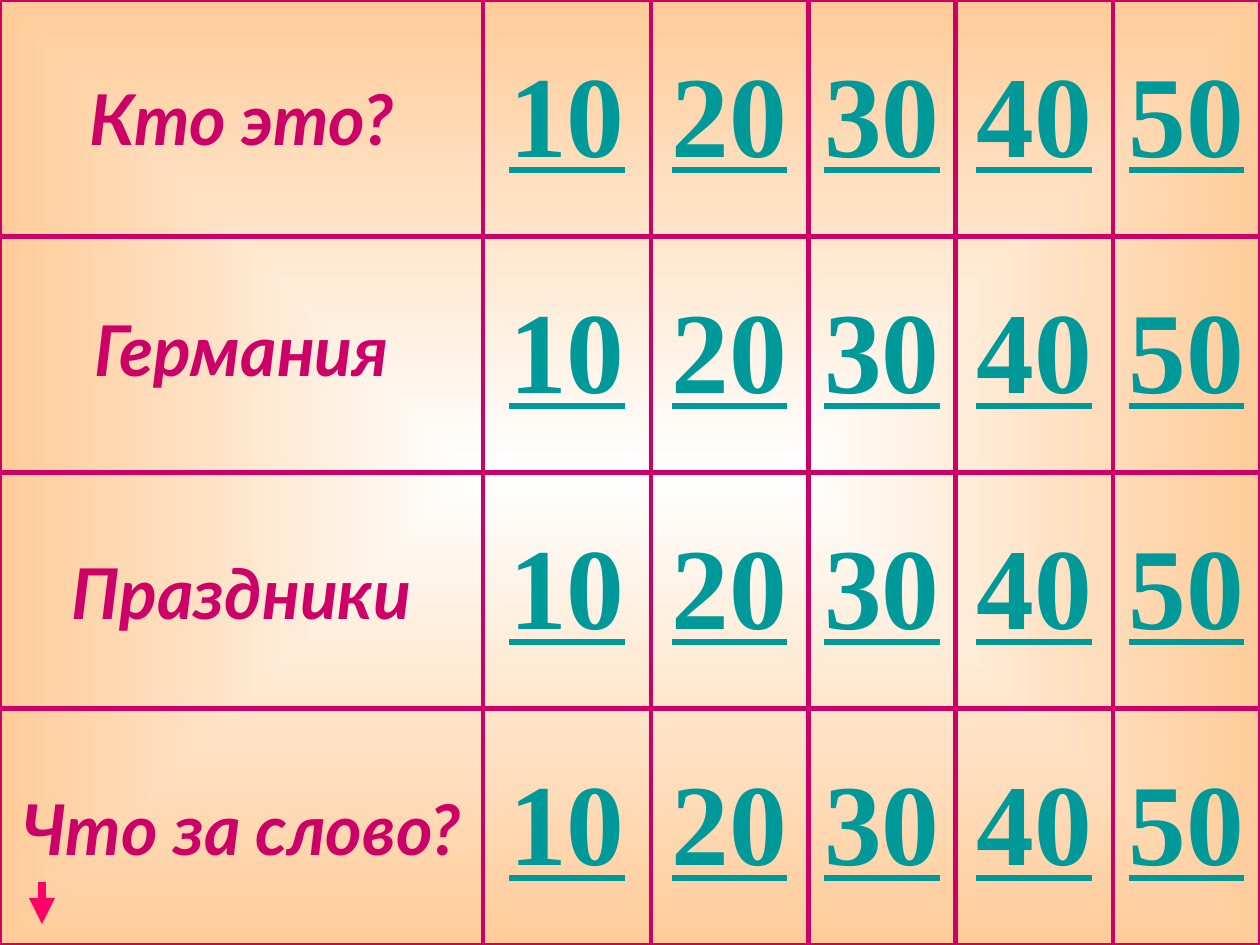
from lxml import etree
from pptx import Presentation
from pptx.dml.color import RGBColor
from pptx.enum.shapes import MSO_CONNECTOR
from pptx.enum.text import MSO_ANCHOR, PP_ALIGN
from pptx.oxml.ns import qn
from pptx.util import Pt

STRAIGHT = MSO_CONNECTOR.STRAIGHT
TOP, MIDDLE = MSO_ANCHOR.TOP, MSO_ANCHOR.MIDDLE
CENTER = PP_ALIGN.CENTER

WIDTH, HEIGHT = 720, 540
COLORS = {"white": "FFFFFF", "peach": "FFCC99", "rose": "CC0066",
          "teal": "009999", "pink": "FF0066"}
COLS = [276, 96, 90, 84, 90, 84]
# Topic and its top margin; None centres the topic in its row
TOPICS = [("Кто это?", None), ("Германия", 40.5),
          ("Праздники", 44.5), ("Что за слово?", 44.5)]
SCORES = ["10", "20", "30", "40", "50"]


def color(name):
    return RGBColor.from_string(COLORS[name])


class Board:
    def __init__(self, slide):
        self.slide = slide
        self.topic = {"face": "Lato", "size": 40, "tint": "rose", "italic": True}
        self.score = {"face": "Times New Roman", "size": 66, "tint": "teal",
                      "under": True}

    def glow(self, inner, outer):
        """Fill the background with a gradient that spreads from the centre."""
        fill = self.slide.background.fill
        fill.gradient()
        for stop, name in zip(fill.gradient_stops, (inner, outer)):
            stop.color.rgb = color(name)
        grad = next(self.slide.element.iter(qn("a:gradFill")))
        grad.remove(grad.find(qn("a:lin")))
        shade = etree.SubElement(grad, qn("a:path"), path="shape")
        etree.SubElement(shade, qn("a:fillToRect"),
                         dict.fromkeys("ltrb", "50000"))

    def grid(self, cols, rows):
        frame = self.slide.shapes.add_table(rows, len(cols), Pt(0), Pt(0),
                                            Pt(WIDTH), Pt(HEIGHT))
        table = frame.table
        table.first_row = table.horz_banding = False
        for col, width in zip(table.columns, cols):
            col.width = Pt(width)
        for row in table.rows:
            row.height = Pt(HEIGHT / rows)
        return table

    def cell(self, cell, text, style, top=None):
        cell.text = text
        cell.vertical_anchor = MIDDLE if top is None else TOP
        if top is not None:
            cell.margin_top = Pt(top)
        self.font(cell.text_frame.paragraphs[0], **style)
        self.border(cell, "rose", 3)
        cell.fill.background()

    def font(self, para, face, size, tint, italic=False, under=False):
        para.alignment = CENTER
        font = para.font
        font.name, font.size, font.bold = face, Pt(size), True
        font.italic, font.underline = italic, under
        font.color.rgb = color(tint)

    def border(self, cell, tint, width):
        props = cell._tc.get_or_add_tcPr()
        for side in ("a:lnL", "a:lnR", "a:lnT", "a:lnB"):
            line = etree.SubElement(props, qn(side), w=str(Pt(width)))
            solid = etree.SubElement(line, qn("a:solidFill"))
            etree.SubElement(solid, qn("a:srgbClr"), val=COLORS[tint])

    def arrow(self, start, end, tint, width):
        ends = [Pt(n) for n in (*start, *end)]
        link = self.slide.shapes.add_connector(STRAIGHT, *ends)
        link.line.color.rgb = color(tint)
        link.line.width = Pt(width)
        etree.SubElement(link.line._get_or_add_ln(), qn("a:tailEnd"),
                         type="triangle")
        etree.SubElement(link._element.spPr, qn("a:effectLst"))


def main():
    deck = Presentation()
    deck.slide_width, deck.slide_height = Pt(WIDTH), Pt(HEIGHT)
    board = Board(deck.slides.add_slide(deck.slide_layouts[6]))
    board.glow("white", "peach")
    table = board.grid(COLS, len(TOPICS))
    for row, (topic, top) in enumerate(TOPICS):
        board.cell(table.cell(row, 0), topic, board.topic, top)
        for col, score in enumerate(SCORES, 1):
            board.cell(table.cell(row, col), score, board.score)
    board.arrow((24, 504), (24, 528), "pink", 5)
    deck.save("out.pptx")


if __name__ == "__main__":
    main()
